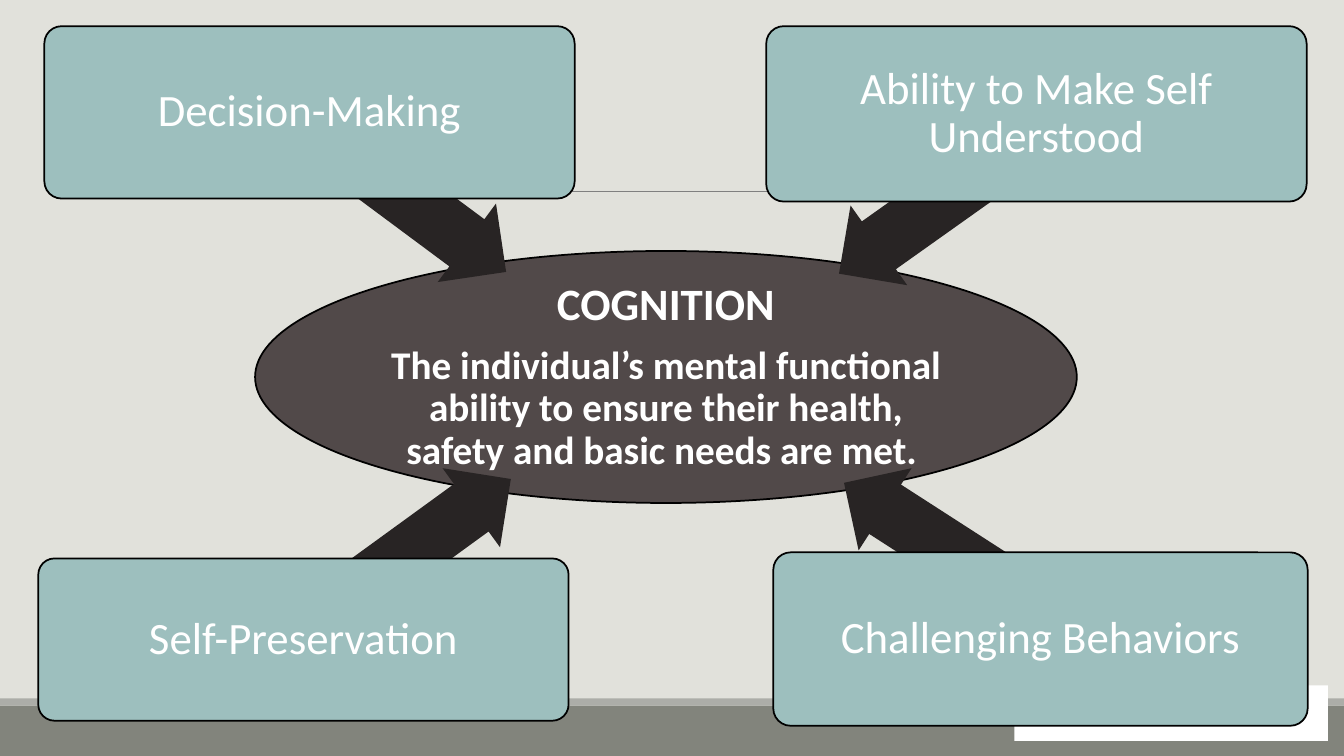
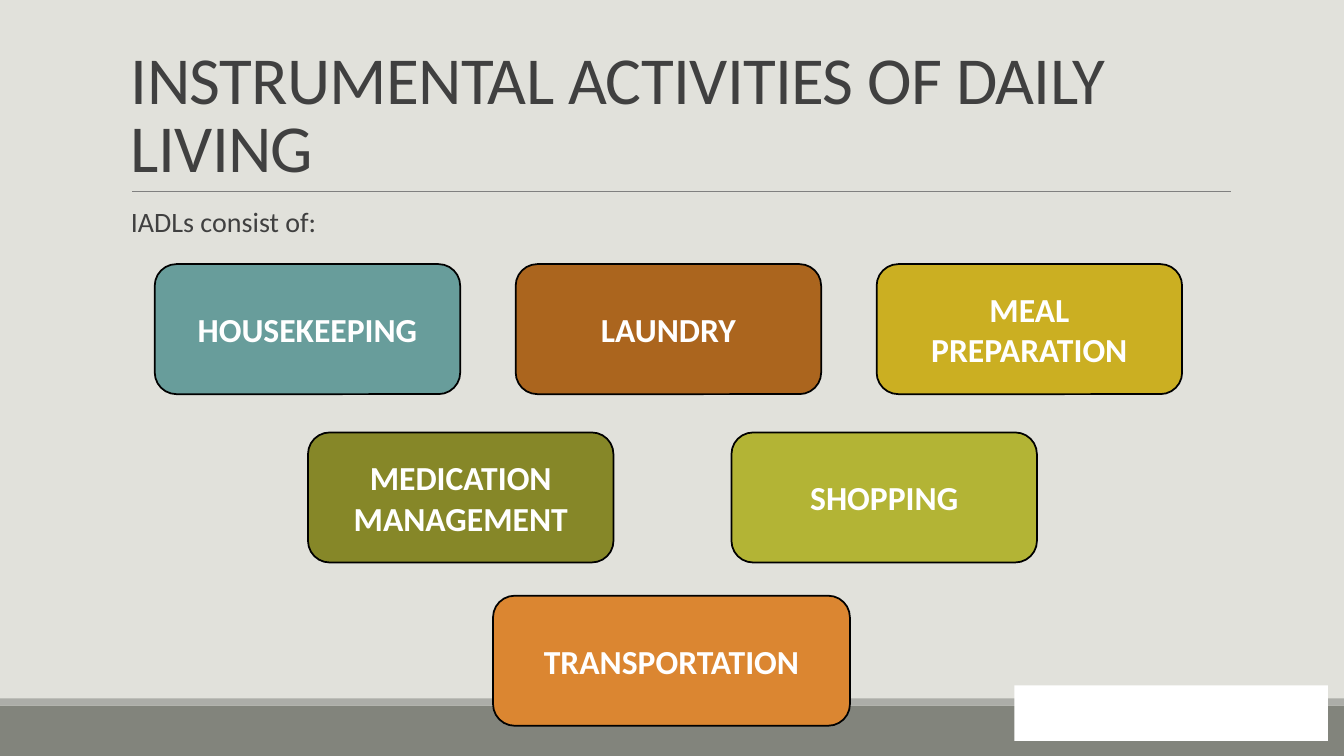
from lxml import etree
from pptx import Presentation
from pptx.dml.color import RGBColor
from pptx.enum.shapes import MSO_CONNECTOR, MSO_SHAPE
from pptx.enum.text import MSO_ANCHOR, PP_ALIGN
from pptx.oxml.ns import qn
from pptx.util import Inches, Pt

RECTANGLE = MSO_SHAPE.RECTANGLE
ROUNDED = MSO_SHAPE.ROUNDED_RECTANGLE
ELLIPSE = MSO_SHAPE.OVAL
ARROW = MSO_SHAPE.LEFT_ARROW
STRAIGHT = MSO_CONNECTOR.STRAIGHT
TOP, MIDDLE, BOTTOM = MSO_ANCHOR.TOP, MSO_ANCHOR.MIDDLE, MSO_ANCHOR.BOTTOM
LEFT, CENTER = PP_ALIGN.LEFT, PP_ALIGN.CENTER

WIDTH, HEIGHT = 13.33, 7.5
FONT = "Calibri"
COLORS = {
    "background": "E1E1DB",
    "band": "82847C",
    "band_edge": "ACADA8",
    "rule": "808080",
    "white": "FFFFFF",
    "black": "000000",
    "text": "404040",
    "hub": "514949",
    "arrow": "282424",
    "factor": "9DBFBE",
    "teal": "689D9B",
    "brown": "AB651E",
    "gold": "CBAF22",
    "olive": "868728",
    "lime": "B3B435",
    "orange": "DB8631",
}

BANDS = [
    ((0, 7, WIDTH, 0.5), "band"),
    ((0, 6.93, WIDTH, 0.07), "band_edge"),
    ((10.06, 6.8, 3.11, 0.55), "white"),
]

HUB_BOX = (2.53, 2.49, 8.15, 2.5)
HUB_TEXT = [
    ("COGNITION", 32),
    ("The individual’s mental functional ability to ensure their health, "
     "safety and basic needs are met. ", 28),
]
ARROW_HEIGHT = 0.97
FACTORS = [
    {"text": "Self-Preservation", "box": (0.38, 5.54, 5.26, 1.61),
     "arrow_center": (4.12, 5.44), "arrow_length": 2.34, "angle": 144},
    {"text": "Decision-Making", "box": (0.44, 0.26, 5.26, 1.71),
     "arrow_center": (4.08, 2), "arrow_length": 2.34, "angle": 216.6},
    {"text": "Ability to Make Self Understood", "box": (7.6, 0.26, 5.36, 1.74),
     "arrow_center": (9.3, 2.02), "arrow_length": 2.4, "angle": 324.6},
    {"text": "Challenging Behaviors", "box": (7.67, 5.48, 5.3, 1.72),
     "arrow_center": (9.38, 5.44), "arrow_length": 2.4, "angle": 32.8},
]

TITLE = "INSTRUMENTAL ACTIVITIES OF DAILY LIVING"
INTRODUCTION = "IADLs consist of:"
CARD_HEIGHT = 1.29
CARD_ROWS = [
    {"top": 2.62, "center": 6.63, "pitch": 3.58, "width": 3.03, "cards": [
        (["HOUSEKEEPING"], "teal"),
        (["LAUNDRY"], "brown"),
        (["MEAL PREPARATION"], "gold")]},
    {"top": 4.29, "center": 6.67, "pitch": 4.2, "width": 3.03, "cards": [
        (["MEDICATION", "MANAGEMENT"], "olive"),
        (["SHOPPING"], "lime")]},
    {"top": 5.91, "center": 6.66, "pitch": 0, "width": 3.54, "cards": [
        (["TRANSPORTATION"], "orange")]},
]


def color(name):
    return RGBColor.from_string(COLORS[name])


def inches(values):
    return [Inches(value) for value in values]


def write_text(shape, lines, color_name="white", bold=False, align=CENTER,
               anchor=MIDDLE, margins=(0.1, 0.05), line_spacing=1,
               space_after=0, tracking=0):
    frame = shape.text_frame
    frame.word_wrap = True
    frame.vertical_anchor = anchor
    frame.margin_left = frame.margin_right = Inches(margins[0])
    frame.margin_top = frame.margin_bottom = Inches(margins[1])
    for index, (text, size) in enumerate(lines):
        paragraph = frame.add_paragraph() if index else frame.paragraphs[0]
        paragraph.alignment = align
        paragraph.line_spacing = line_spacing
        paragraph.space_after = Pt(size * space_after)
        run = paragraph.add_run()
        run.text = text
        run.font.name = FONT
        run.font.size = Pt(size)
        run.font.bold = bold
        run.font.color.rgb = color(color_name)
        if tracking:
            run._r.get_or_add_rPr().set("spc", str(round(tracking * 100)))


def add_shape(slide, kind, box, fill, outlined=False, adjustments=()):
    shape = slide.shapes.add_shape(kind, *inches(box))
    shape.shadow.inherit = False
    shape.fill.solid()
    shape.fill.fore_color.rgb = color(fill)
    if outlined:
        shape.line.color.rgb = color("black")
        shape.line.width = Pt(1.25)
    else:
        shape.line.fill.background()
    for index, value in enumerate(adjustments):
        shape.adjustments[index] = value
    return shape


def add_base_slide(presentation):
    slide = presentation.slides.add_slide(presentation.slide_layouts[6])
    for box, fill in BANDS:
        add_shape(slide, RECTANGLE, box, fill)
    rule = slide.shapes.add_connector(STRAIGHT, *inches((1.31, 1.9, 12.21, 1.9)))
    rule.line.color.rgb = color("rule")
    rule.line.width = Pt(0.5)
    etree.SubElement(rule._element.spPr, qn("a:effectLst"))
    return slide


def build_cognition(presentation):
    slide = add_base_slide(presentation)
    hub = add_shape(slide, ELLIPSE, HUB_BOX, "hub", outlined=True)
    write_text(hub, HUB_TEXT, bold=True, margins=(0.02, 0.02),
               line_spacing=0.9, space_after=0.35)
    for factor in FACTORS:
        center_x, center_y = factor["arrow_center"]
        length = factor["arrow_length"]
        arrow_box = (center_x - length / 2, center_y - ARROW_HEIGHT / 2,
                     length, ARROW_HEIGHT)
        arrow = add_shape(slide, ARROW, arrow_box, "arrow", adjustments=(0.6, 0.5))
        arrow.rotation = factor["angle"]
        card = add_shape(slide, ROUNDED, factor["box"], "factor",
                         outlined=True, adjustments=(0.1,))
        write_text(card, [(factor["text"], 32)], margins=(0.07, 0.07),
                   line_spacing=0.9, space_after=0.35)


def build_activities(presentation):
    slide = add_base_slide(presentation)
    title = slide.shapes.add_textbox(*inches((1.2, 0.31, 11, 1.59)))
    write_text(title, [(TITLE, 48)], color_name="text", align=LEFT,
               anchor=BOTTOM, line_spacing=0.85, tracking=-0.5)
    introduction = slide.shapes.add_textbox(*inches((1.2, 2.02, 11, 0.5)))
    write_text(introduction, [(INTRODUCTION, 20)], color_name="text",
               align=LEFT, anchor=TOP, line_spacing=0.9)
    for row in CARD_ROWS:
        middle = (len(row["cards"]) - 1) / 2
        for index, (lines, fill) in enumerate(row["cards"]):
            left = row["center"] + (index - middle) * row["pitch"] - row["width"] / 2
            card = add_shape(slide, ROUNDED,
                             (left, row["top"], row["width"], CARD_HEIGHT),
                             fill, outlined=True)
            write_text(card, [(line, 24) for line in lines], bold=True)


def main():
    presentation = Presentation()
    presentation.slide_width, presentation.slide_height = inches((WIDTH, HEIGHT))
    background = presentation.slide_master.background.fill
    background.solid()
    background.fore_color.rgb = color("background")
    build_cognition(presentation)
    build_activities(presentation)
    presentation.save("out.pptx")


if __name__ == "__main__":
    main()
